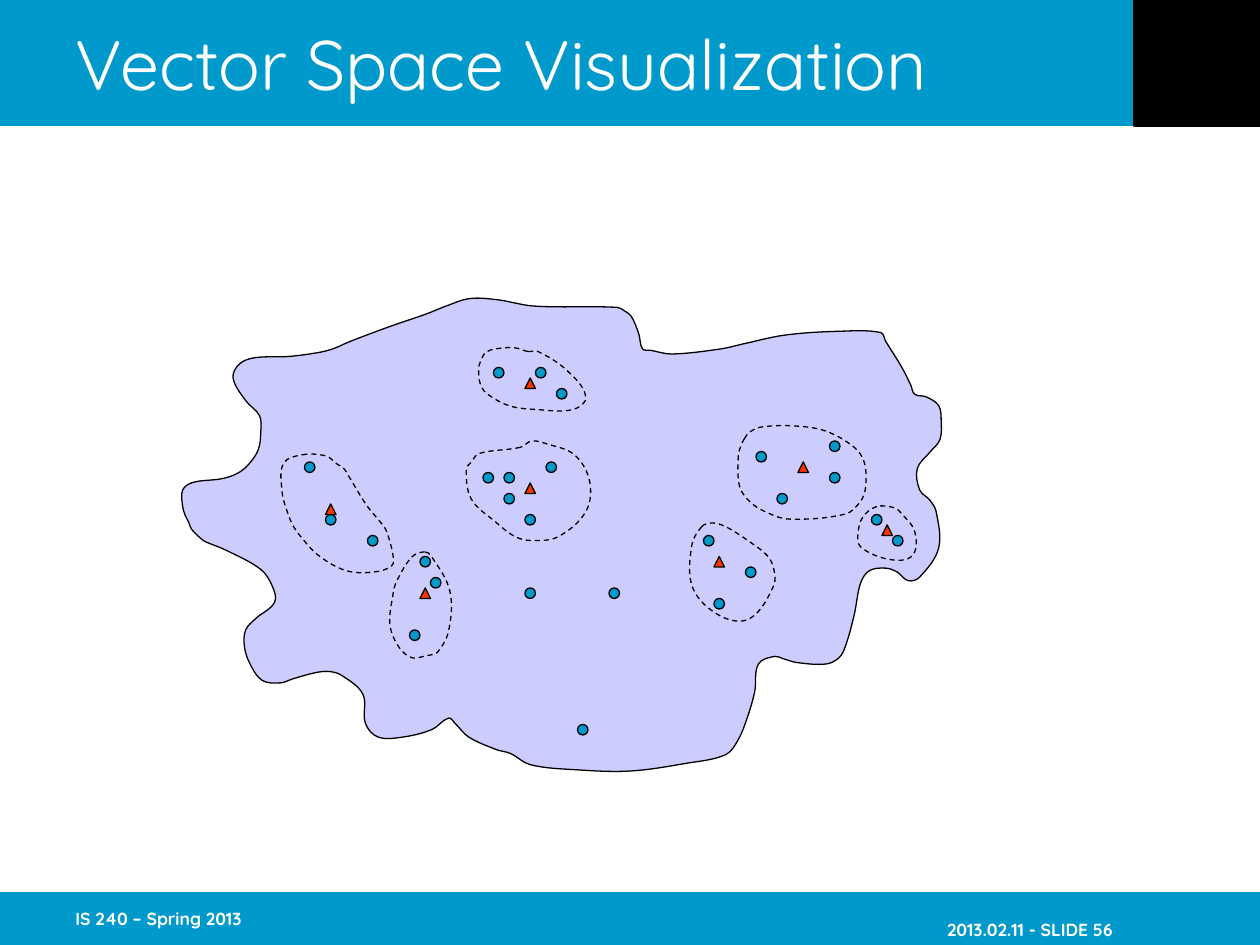
from math import dist

from pptx import Presentation
from pptx.dml.color import RGBColor
from pptx.enum.dml import MSO_LINE
from pptx.enum.shapes import MSO_SHAPE as Shape
from pptx.enum.text import MSO_ANCHOR as Anchor, PP_ALIGN as Align
from pptx.oxml.ns import qn
from pptx.util import Inches, Pt
from lxml import etree

BLUE = RGBColor(0x00, 0x99, 0xCC)
BLACK = RGBColor(0x00, 0x00, 0x00)
WHITE = RGBColor(0xFF, 0xFF, 0xFF)
LAVENDER = RGBColor(0xCC, 0xCC, 0xFF)
RED = RGBColor(0xFF, 0x33, 0x00)
FONT = "Quicksand"
GRID = Inches(1) / 12

SPACE_OUTLINE = [
    (3.56, 5.7), (3.43, 5.79), (3.2, 5.85), (3, 5.85), (2.9, 5.74), (2.88, 5.51), (2.71, 5.36),
    (2.61, 5.33), (2.5, 5.34), (2.32, 5.39), (2.23, 5.42), (2.08, 5.4), (1.98, 5.26),
    (1.94, 5.13), (1.95, 5), (2.03, 4.91), (2.18, 4.78), (2.16, 4.65), (2.07, 4.52), (1.8, 4.37),
    (1.63, 4.3), (1.6, 4.28), (1.52, 4.2), (1.5, 4.15), (1.47, 4.09), (1.45, 4.02),
    (1.45, 3.89), (1.53, 3.83), (1.76, 3.8), (1.88, 3.76), (1.97, 3.69), (2.05, 3.57),
    (2.07, 3.43), (2.06, 3.3), (1.95, 3.18), (1.85, 3), (1.9, 2.89), (2.02, 2.84), (2.29, 2.83),
    (2.52, 2.8), (2.64, 2.77), (2.78, 2.71), (3.1, 2.59), (3.39, 2.49), (3.54, 2.43),
    (3.73, 2.37), (3.95, 2.38), (4.24, 2.43), (4.9, 2.44), (4.96, 2.47), (5.01, 2.51),
    (5.07, 2.65), (5.1, 2.77), (5.16, 2.78), (5.33, 2.81), (5.72, 2.77), (5.9, 2.73),
    (6.23, 2.66), (6.66, 2.63), (6.99, 2.64), (7.03, 2.71), (7.16, 2.92), (7.23, 3.06),
    (7.26, 3.13), (7.35, 3.15), (7.45, 3.22), (7.47, 3.34), (7.46, 3.49), (7.38, 3.59),
    (7.28, 3.72), (7.3, 3.89), (7.38, 3.97), (7.43, 4.06), (7.45, 4.35), (7.3, 4.58),
    (7.21, 4.61), (7.12, 4.54), (7.03, 4.51), (6.9, 4.53), (6.83, 4.63), (6.78, 4.88),
    (6.71, 5.13), (6.66, 5.22), (6.56, 5.27), (6.33, 5.26), (6.22, 5.23), (6.15, 5.21),
    (6.02, 5.27), (5.99, 5.49), (5.93, 5.7), (5.86, 5.87), (5.76, 5.99), (5.44, 6.06), (5, 6.12),
    (4.57, 6.11), (4.21, 6.07), (4.05, 5.98), (3.94, 5.95), (3.72, 5.85), (3.61, 5.74),
]
CLUSTER_OUTLINES = [
    [(2.4, 3.61), (2.59, 3.62), (2.67, 3.68), (2.73, 3.72), (2.78, 3.8), (2.91, 4.01),
     (3.04, 4.17), (3.07, 4.22), (3.12, 4.41), (3.11, 4.49), (2.97, 4.54), (2.75, 4.53),
     (2.53, 4.41), (2.38, 4.25), (2.32, 4.16), (2.27, 4.03), (2.24, 3.91), (2.25, 3.68)],
    [(3.37, 4.38), (3.27, 4.42), (3.15, 4.61), (3.12, 4.71), (3.1, 4.99), (3.24, 5.21),
     (3.41, 5.2), (3.47, 5.18), (3.56, 5.01), (3.57, 4.69), (3.42, 4.41)],
    [(4.13, 3.55), (3.8, 3.6), (3.74, 3.67), (3.7, 3.72), (3.74, 3.96), (3.93, 4.14),
     (4.09, 4.26), (4.22, 4.29), (4.43, 4.26), (4.65, 4.06), (4.68, 3.82), (4.56, 3.61),
     (4.33, 3.52), (4.22, 3.5)],
    [(5.57, 4.18), (5.49, 4.33), (5.5, 4.67), (5.72, 4.89), (5.95, 4.91), (6.14, 4.65),
     (6.14, 4.51), (6.09, 4.41), (5.95, 4.3), (5.76, 4.18), (5.65, 4.15)],
    [(5.91, 3.48), (5.88, 3.54), (5.86, 3.62), (5.87, 3.86), (5.95, 3.98), (6.07, 4.06),
     (6.26, 4.12), (6.71, 4.08), (6.83, 3.98), (6.87, 3.87), (6.86, 3.67), (6.78, 3.55),
     (6.55, 3.42), (6.29, 3.38), (6.04, 3.39), (5.95, 3.43)],
    [(6.96, 4.02), (6.85, 4.1), (6.81, 4.23), (6.83, 4.34), (7.06, 4.44), (7.24, 4.41),
     (7.26, 4.22), (7.15, 4.07), (7.1, 4.03)],
    [(4.19, 2.79), (4.08, 2.76), (3.93, 2.77), (3.85, 2.8), (3.82, 2.86), (3.8, 2.91),
     (3.81, 3.04), (3.86, 3.12), (4.04, 3.22), (4.25, 3.25), (4.55, 3.25), (4.65, 3.15),
     (4.5, 2.94), (4.27, 2.79)],
]
DOCUMENTS = [
    (41, 55), (40, 53), (46, 45), (39, 60), (58, 56), (50, 56), (67, 51), (55, 69), (52, 44),
    (29, 44), (31, 49), (35, 51), (79, 45), (68, 57), (71, 54), (74, 47), (72, 43), (79, 42),
    (83, 49), (85, 51), (47, 35), (51, 35), (53, 37), (48, 47), (48, 45), (50, 49),
]
CENTROIDS = [(50, 46), (50, 36), (68, 53), (76, 44), (84, 50), (40, 56), (31, 48)]


def style(shape, fill=None, line=None):
    """Set a shape's fill and line, and remove its shadow."""
    shape.shadow.inherit = False
    if fill is None:
        shape.fill.background()
    else:
        shape.fill.solid()
        shape.fill.fore_color.rgb = fill
    if line is None:
        shape.line.fill.background()
    else:
        shape.line.color.rgb = line
        shape.line.width = Pt(0.75)


def add_block(slide, kind, left, top, width, height, fill, line=None):
    """Add a filled preset shape."""
    shape = slide.shapes.add_shape(kind, round(left), round(top), round(width), round(height))
    style(shape, fill, line)


def add_label(slide, text, left, top, width, height, size, bold=False):
    """Add a vertically centred white text box and return its frame."""
    frame = slide.shapes.add_textbox(left, top, width, height).text_frame
    frame.word_wrap = True
    frame.vertical_anchor = Anchor.MIDDLE
    paragraph = frame.paragraphs[0]
    paragraph.text = text
    font = paragraph.font
    font.name, font.size, font.bold = FONT, Pt(size), bold
    font.color.rgb = WHITE
    return frame


def smooth_points(outline):
    """Return two handles and an end point for each side of a smooth closed outline."""
    count = len(outline)
    tangents = []
    for index, following in enumerate(outline[1:] + outline[:1]):
        before = outline[index - 1]
        span = dist(before, following)
        tangents.append([(b - a) / span for a, b in zip(before, following)])
    points = []
    for index, start in enumerate(outline):
        target = (index + 1) % count
        end = outline[target]
        reach = dist(start, end) / 3
        points.append([p + reach * t for p, t in zip(start, tangents[index])])
        points.append([p - reach * t for p, t in zip(end, tangents[target])])
        points.append(end)
    return points


def add_curve(slide, outline, left, top, fill=None):
    """Add a smooth closed outline through the given points."""
    start, *points = [(left + Inches(x), top + Inches(y))
                      for x, y in outline[:1] + smooth_points(outline)]
    builder = slide.shapes.build_freeform(*start)
    builder.add_line_segments(points, close=True)
    shape = builder.convert_to_shape()
    segments = list(shape._element.iter(qn("a:lnTo")))
    for first in range(0, len(points), 3):
        curve = etree.Element(qn("a:cubicBezTo"))
        segments[first].addprevious(curve)
        for segment in segments[first:first + 3]:
            curve.append(segment[0])
            segment.getparent().remove(segment)
    style(shape, fill, BLACK)
    return shape


def add_header(slide, left, top, width, height):
    """Add the title band with its black corner."""
    corner, margin = Inches(1), Inches(0.5)
    add_block(slide, Shape.RECTANGLE, left, top, width, height, BLUE)
    add_block(slide, Shape.RECTANGLE, left + width - corner, top, corner, height, BLACK, BLACK)
    add_label(slide, "Vector Space Visualization", left + margin, top,
              width - margin - corner, height, 40)


def add_footer(slide, left, top, width, height):
    """Add the bottom band with the course and the slide number."""
    add_block(slide, Shape.RECTANGLE, left, top, width, height, BLUE)
    margin, label = Inches(0.5), Inches(2.08)
    add_label(slide, "IS 240 – Spring 2013", left + margin, top, label, height, 10, True)
    frame = add_label(slide, "2013.02.11 - SLIDE 56", left + width - margin - label, top,
                      label, height, 10, True)
    frame.margin_left = 0
    frame.margin_top, frame.margin_right = Inches(0.22), Inches(0.67)
    frame.paragraphs[0].alignment = Align.RIGHT


def add_vector_space(slide, left, top):
    """Add the space, its documents and centroids, and the cluster outlines."""
    add_curve(slide, SPACE_OUTLINE, left, top, LAVENDER)
    for kind, cells, color in ((Shape.OVAL, DOCUMENTS, BLUE),
                               (Shape.ISOSCELES_TRIANGLE, CENTROIDS, RED)):
        for column, row in cells:
            add_block(slide, kind, left + column * GRID, top + row * GRID, GRID, GRID,
                      color, BLACK)
    for outline in CLUSTER_OUTLINES:
        add_curve(slide, outline, left, top).line.dash_style = MSO_LINE.DASH


def main():
    """Build and save the slide."""
    presentation = Presentation()
    presentation.slide_width, presentation.slide_height = Inches(10), Inches(7.5)
    slide = presentation.slides.add_slide(presentation.slide_layouts[6])
    add_header(slide, Inches(0), Inches(0), Inches(10), Inches(1))
    add_footer(slide, Inches(0), Inches(7.08), Inches(10), Inches(0.42))
    add_vector_space(slide, Inches(0), Inches(0))
    presentation.save("out.pptx")


if __name__ == "__main__":
    main()
